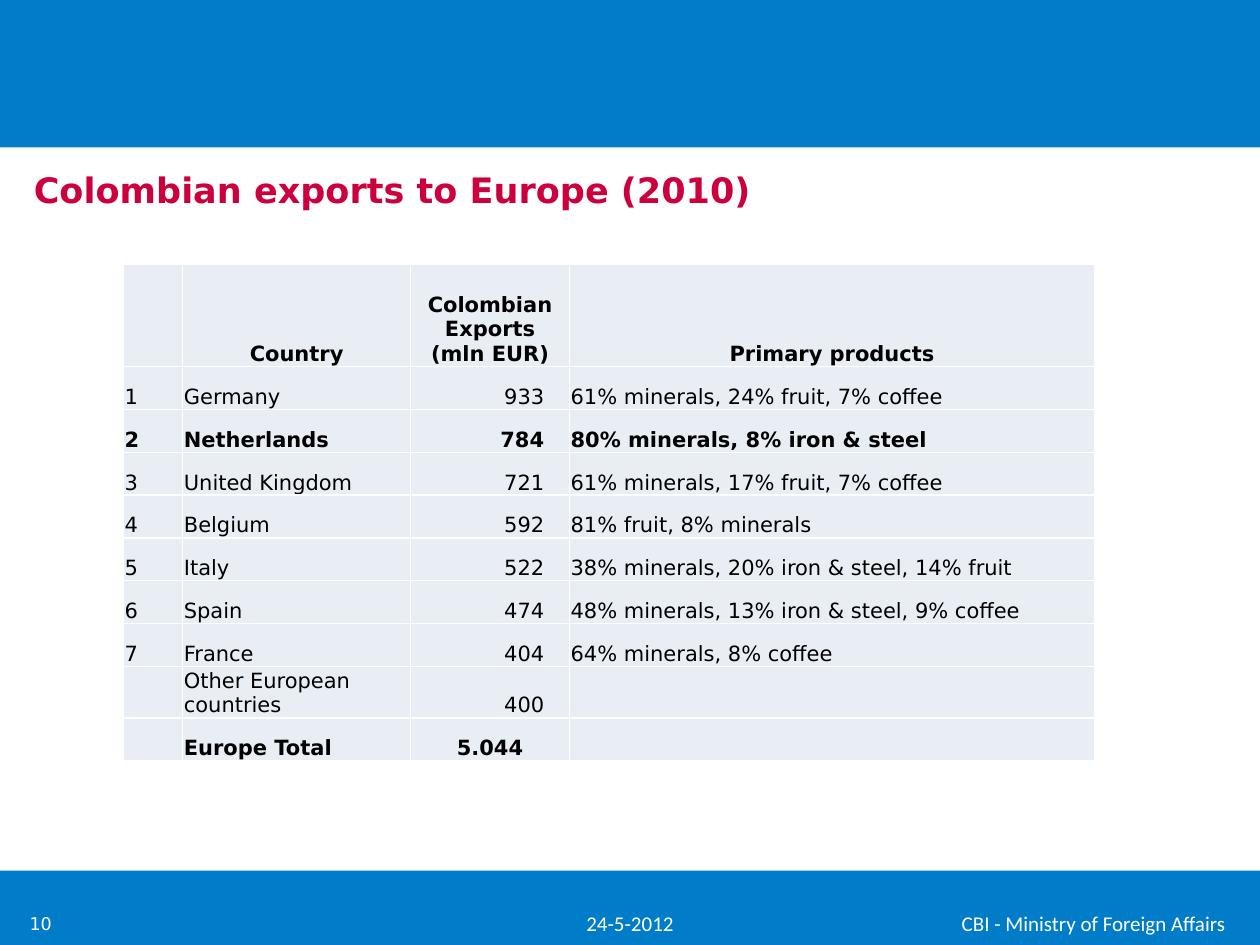
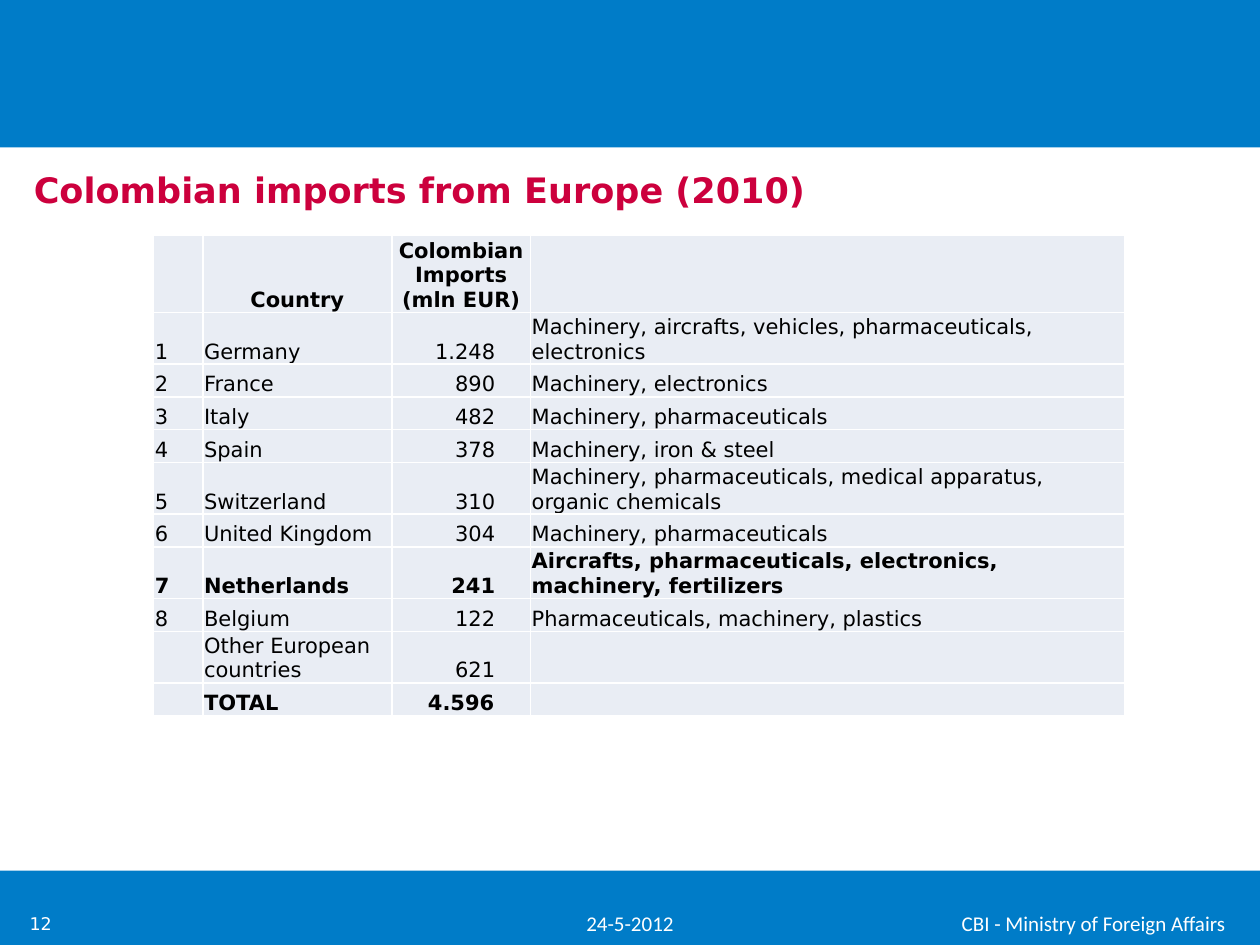
"""Build two slides with tables of Colombian trade with Europe."""
from dataclasses import dataclass

from lxml import etree
from pptx import Presentation
from pptx.dml.color import RGBColor
from pptx.enum.shapes import MSO_SHAPE
from pptx.enum.text import MSO_ANCHOR, PP_ALIGN
from pptx.oxml.ns import qn
from pptx.util import Inches, Pt

RECT = MSO_SHAPE.RECTANGLE
MIDDLE, BOTTOM = MSO_ANCHOR.MIDDLE, MSO_ANCHOR.BOTTOM
LEFT, CENTER, RIGHT = PP_ALIGN.LEFT, PP_ALIGN.CENTER, PP_ALIGN.RIGHT

COLORS = {"band": "007CC8", "title": "CC003D", "cell": "E9EDF4",
          "text": "000000", "white": "FFFFFF"}
SANS, FOOTER_FONT = "DejaVu Sans", "Calibri"
AMOUNT_COL = 2


@dataclass(frozen=True)
class Box:
    left: float
    top: float
    width: float
    height: float

    def emu(self) -> list[int]:
        return [Inches(v) for v in (self.left, self.top, self.width, self.height)]


@dataclass(frozen=True)
class Style:
    size: int
    color: str
    font: str = SANS
    bold: bool = False
    align: PP_ALIGN = LEFT


@dataclass(frozen=True)
class Row:
    cells: tuple[str, str, str, str]
    height: float
    bold: bool = False


@dataclass(frozen=True)
class TradeSlide:
    number: str
    title: str
    left: float
    top: float
    col_widths: tuple[float, ...]
    amount_margin: float
    rows: tuple[Row, ...]


BANDS = (Box(0, 6.91, 10, 0.59), Box(0, 0, 10, 1.17), Box(0, 7.14, 10, 0.36))
TITLE_BOX = Box(0.17, 1.15, 9.63, 0.71)
DATE_BOX = Box(0, 7.13, 10, 0.4)
ORG_BOX = Box(7.36, 7.13, 2.64, 0.4)
NUMBER_BOX = Box(-0.12, 7.13, 0.63, 0.4)

TITLE_STYLE = Style(20, "title", bold=True)
FOOTER_STYLE = Style(12, "white", FOOTER_FONT, align=CENTER)
NUMBER_STYLE = Style(10, "white", align=RIGHT)

ROW_H, WRAPPED_H, SMALL_H = 0.34, 0.4, 0.26

EXPORTS = TradeSlide(
    "10", "Colombian exports to Europe (2010)", 0.98, 2.1,
    (0.47, 1.81, 1.26, 4.17), 0.2, (
        Row(("", "Country", "Colombian Exports\n(mln EUR)", "Primary products"), 0.81, True),
        Row(("1", "Germany", "933", "61% minerals, 24% fruit, 7% coffee"), ROW_H),
        Row(("2", "Netherlands", "784", "80% minerals, 8% iron & steel"), ROW_H, True),
        Row(("3", "United Kingdom", "721", "61% minerals, 17% fruit, 7% coffee"), ROW_H),
        Row(("4", "Belgium", "592", "81% fruit, 8% minerals"), ROW_H),
        Row(("5", "Italy", "522", "38% minerals, 20% iron & steel, 14% fruit"), ROW_H),
        Row(("6", "Spain", "474", "48% minerals, 13% iron & steel, 9% coffee"), ROW_H),
        Row(("7", "France", "404", "64% minerals, 8% coffee"), ROW_H),
        Row(("", "Other European countries", "400", ""), WRAPPED_H),
        Row(("", "Europe Total", "5.044", ""), ROW_H, True),
    ))

IMPORTS = TradeSlide(
    "12", "Colombian imports from Europe (2010)", 1.22, 1.87,
    (0.39, 1.5, 1.1, 4.72), 0.28, (
        Row(("", "Country", "Colombian Imports (mln EUR)", ""), 0.58, True),
        Row(("1", "Germany", "1.248",
             "Machinery, aircrafts, vehicles, pharmaceuticals, electronics"), WRAPPED_H),
        Row(("2", "France", "890", "Machinery, electronics"), SMALL_H),
        Row(("3", "Italy", "482", "Machinery, pharmaceuticals"), SMALL_H),
        Row(("4", "Spain", "378", "Machinery, iron & steel"), SMALL_H),
        Row(("5", "Switzerland", "310",
             "Machinery, pharmaceuticals, medical apparatus, organic chemicals"), WRAPPED_H),
        Row(("6", "United Kingdom", "304", "Machinery, pharmaceuticals"), SMALL_H),
        Row(("7", "Netherlands", "241",
             "Aircrafts, pharmaceuticals, electronics, machinery, fertilizers"),
            WRAPPED_H, True),
        Row(("8", "Belgium", "122", "Pharmaceuticals, machinery, plastics"), SMALL_H),
        Row(("", "Other European countries", "621", ""), WRAPPED_H),
        Row(("", "TOTAL", "4.596", ""), SMALL_H, True),
    ))


def rgb(name: str) -> RGBColor:
    return RGBColor.from_string(COLORS[name])


def write(tf, text: str, style: Style) -> None:
    tf.text = text
    for p in tf.paragraphs:
        p.alignment = style.align
        for r in p.runs:
            r.font.size = Pt(style.size)
            r.font.name = style.font
            r.font.bold = style.bold
            r.font.color.rgb = rgb(style.color)
        if not p.runs:
            etree.SubElement(p._p, qn("a:endParaRPr"), sz=str(style.size * 100))


def add_band(s, box: Box) -> None:
    sp = s.shapes.add_shape(RECT, *box.emu())
    sp.shadow.inherit = False
    sp.fill.solid()
    sp.fill.fore_color.rgb = rgb("band")
    sp.line.fill.background()


def add_text(s, box: Box, text: str, style: Style) -> None:
    tf = s.shapes.add_textbox(*box.emu()).text_frame
    tf.word_wrap = True
    tf.vertical_anchor = MIDDLE
    write(tf, text, style)


def add_borders(cell) -> None:
    tc_pr = cell._tc.get_or_add_tcPr()
    for i, side in enumerate(("lnL", "lnR", "lnT", "lnB")):
        ln = etree.Element(qn(f"a:{side}"), w=str(Pt(1)))
        fill = etree.SubElement(ln, qn("a:solidFill"))
        etree.SubElement(fill, qn("a:srgbClr"), val=COLORS["white"])
        tc_pr.insert(i, ln)


def add_trade_table(s, trade: TradeSlide) -> None:
    box = Box(trade.left, trade.top, sum(trade.col_widths),
              sum(row.height for row in trade.rows))
    table = s.shapes.add_table(len(trade.rows), len(trade.col_widths), *box.emu()).table
    table.first_row = table.horz_banding = False
    for col, width in zip(table.columns, trade.col_widths):
        col.width = Inches(width)
    last = len(trade.rows) - 1
    for i, row in enumerate(trade.rows):
        table.rows[i].height = Inches(row.height)
        for j, text in enumerate(row.cells):
            cell = table.cell(i, j)
            cell.fill.solid()
            cell.fill.fore_color.rgb = rgb("cell")
            add_borders(cell)
            cell.vertical_anchor = BOTTOM
            cell.margin_left = cell.margin_right = cell.margin_top = Inches(0.01)
            cell.margin_bottom = 0
            align = LEFT
            if i == 0 or (i == last and j == AMOUNT_COL):
                align = CENTER
            elif j == AMOUNT_COL:
                align = RIGHT
                cell.margin_right = Inches(trade.amount_margin)
            write(cell.text_frame, text, Style(12, "text", bold=row.bold, align=align))


def add_trade_slide(prs, trade: TradeSlide) -> None:
    s = prs.slides.add_slide(prs.slide_layouts[6])
    for band in BANDS:
        add_band(s, band)
    add_text(s, DATE_BOX, "24-5-2012", FOOTER_STYLE)
    add_text(s, ORG_BOX, "CBI - Ministry of Foreign Affairs", FOOTER_STYLE)
    add_text(s, NUMBER_BOX, trade.number, NUMBER_STYLE)
    add_text(s, TITLE_BOX, trade.title, TITLE_STYLE)
    add_trade_table(s, trade)


def main() -> None:
    prs = Presentation()
    prs.slide_width, prs.slide_height = Inches(10), Inches(7.5)
    for trade in (EXPORTS, IMPORTS):
        add_trade_slide(prs, trade)
    prs.save("out.pptx")


if __name__ == "__main__":
    main()
